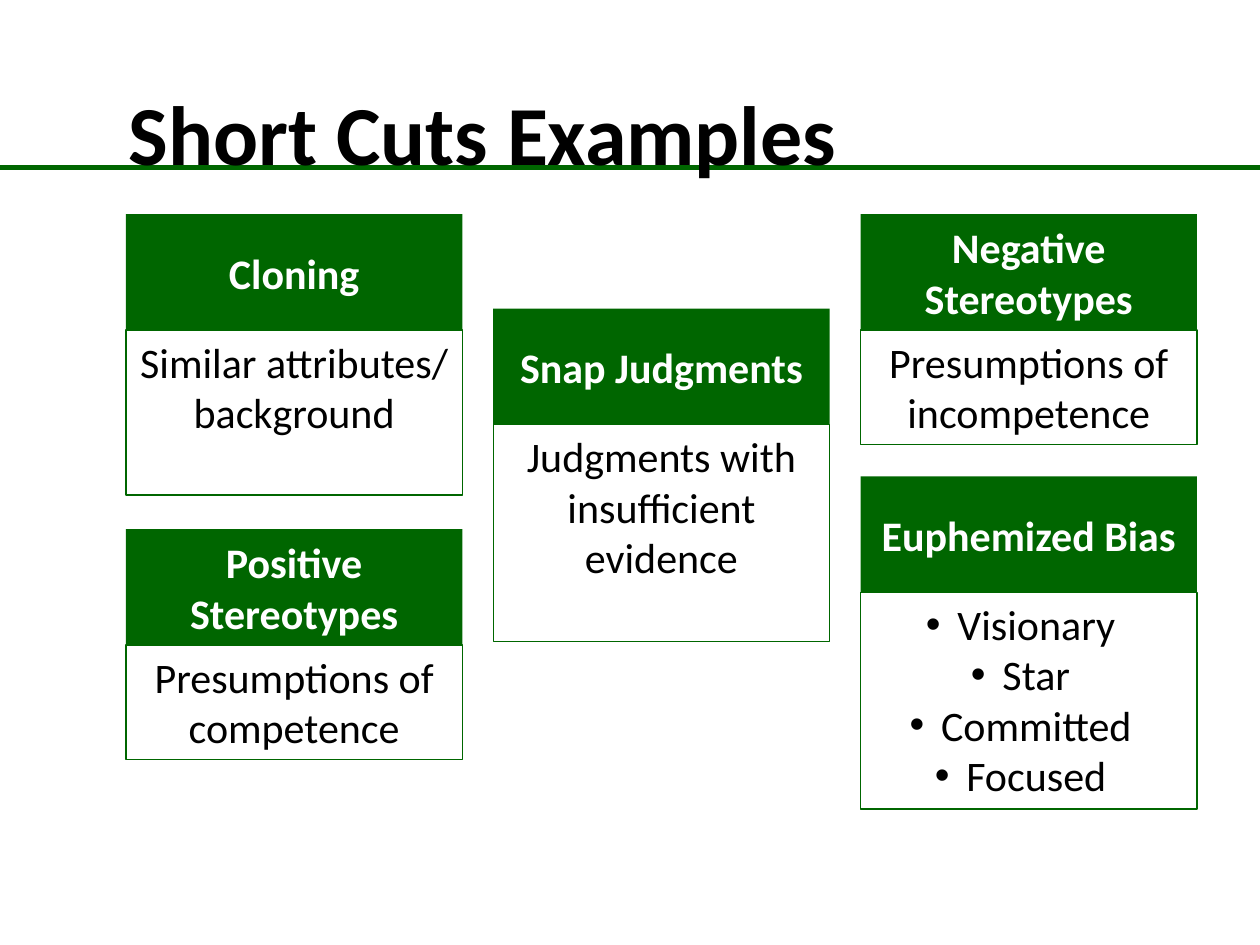
from dataclasses import dataclass

from lxml import etree
from pptx import Presentation
from pptx.dml.color import RGBColor
from pptx.enum import shapes, text
from pptx.oxml import ns
from pptx.util import Inches, Pt


@dataclass(frozen=True)
class Theme:
    font: str = "Calibri"
    green: RGBColor = RGBColor(0x00, 0x66, 0x00)
    black: RGBColor = RGBColor(0x00, 0x00, 0x00)
    white: RGBColor = RGBColor(0xFF, 0xFF, 0xFF)
    title_size: Pt = Pt(48)
    card_size: Pt = Pt(24)
    rule_width: Pt = Pt(3)
    border_width: Pt = Pt(0.75)


THEME = Theme()
SLIDE_WIDTH, SLIDE_HEIGHT = 10, 7.5
CARD_WIDTH, HEADER_HEIGHT = 2.67, 0.92
COLUMN_LEFT, COLUMN_STEP = 1, 2.915

CARDS = [
    (0, 1.7, 1.31, "Cloning", ["Similar attributes/ background"]),
    (0, 4.2, 0.91, "Positive Stereotypes", ["Presumptions of competence"]),
    (1, 2.45, 1.72, "Snap Judgments", ["Judgments with insufficient evidence"]),
    (2, 1.7, 0.91, "Negative Stereotypes", ["Presumptions of incompetence"]),
    (2, 3.78, 1.72, "Euphemized Bias", ["Visionary", "Star", "Committed", "Focused"]),
]


def add_run(paragraph, wording, size, color, bold):
    run = paragraph.add_run()
    run.text = wording
    run.font.name = THEME.font
    run.font.size = size
    run.font.bold = bold
    run.font.color.rgb = color


def add_bullet(paragraph):
    properties = paragraph._p.get_or_add_pPr()
    properties.set("marL", str(Inches(0.12)))
    properties.set("indent", str(Inches(-0.25)))
    etree.SubElement(properties, ns.qn("a:buFont")).set("typeface", "Arial")
    etree.SubElement(properties, ns.qn("a:buChar")).set("char", "•")


def add_title(slide, left, top, width, height):
    title = slide.shapes.title
    title.left, title.top = Inches(left), Inches(top)
    title.width, title.height = Inches(width), Inches(height)
    title.text_frame.vertical_anchor = text.MSO_ANCHOR.MIDDLE
    paragraph = title.text_frame.paragraphs[0]
    paragraph.alignment = text.PP_ALIGN.LEFT
    add_run(paragraph, "Short Cuts Examples", THEME.title_size, THEME.black, True)


def add_rule(slide, left, top, width):
    rule = slide.shapes.add_connector(
        shapes.MSO_CONNECTOR.STRAIGHT,
        Inches(left), Inches(top), Inches(left + width), Inches(top),
    )
    rule.line.color.rgb = THEME.green
    rule.line.width = THEME.rule_width
    etree.SubElement(rule._element.spPr, ns.qn("a:effectLst"))
    slide.shapes.title._element.addprevious(rule._element)


def add_panel(slide, left, top, width, height, lines, color, bold, anchor):
    panel = slide.shapes.add_shape(
        shapes.MSO_SHAPE.RECTANGLE,
        Inches(left), Inches(top), Inches(width), Inches(height),
    )
    panel.shadow.inherit = False
    frame = panel.text_frame
    frame.word_wrap = True
    frame.vertical_anchor = anchor
    for index, line in enumerate(lines):
        paragraph = frame.add_paragraph() if index else frame.paragraphs[0]
        paragraph.alignment = text.PP_ALIGN.CENTER
        if len(lines) > 1:
            add_bullet(paragraph)
        add_run(paragraph, line, THEME.card_size, color, bold)
    return panel


def add_card(slide, left, top, width, body_height, heading, lines):
    body = add_panel(
        slide, left, top + HEADER_HEIGHT, width, body_height,
        lines, THEME.black, False, text.MSO_ANCHOR.TOP,
    )
    body.fill.background()
    body.line.color.rgb = THEME.green
    body.line.width = THEME.border_width

    header = add_panel(
        slide, left, top, width, HEADER_HEIGHT,
        [heading], THEME.white, True, text.MSO_ANCHOR.MIDDLE,
    )
    header.fill.solid()
    header.fill.fore_color.rgb = THEME.green
    header.line.fill.background()


def main():
    presentation = Presentation()
    presentation.slide_width = Inches(SLIDE_WIDTH)
    presentation.slide_height = Inches(SLIDE_HEIGHT)
    slide = presentation.slides.add_slide(presentation.slide_layouts[5])
    add_title(slide, 0.92, 0.42, 8.58, 1.25)
    add_rule(slide, 0, 1.33, SLIDE_WIDTH)
    for column, top, body_height, heading, lines in CARDS:
        left = COLUMN_LEFT + column * COLUMN_STEP
        add_card(slide, left, top, CARD_WIDTH, body_height, heading, lines)
    presentation.save("out.pptx")


if __name__ == "__main__":
    main()
